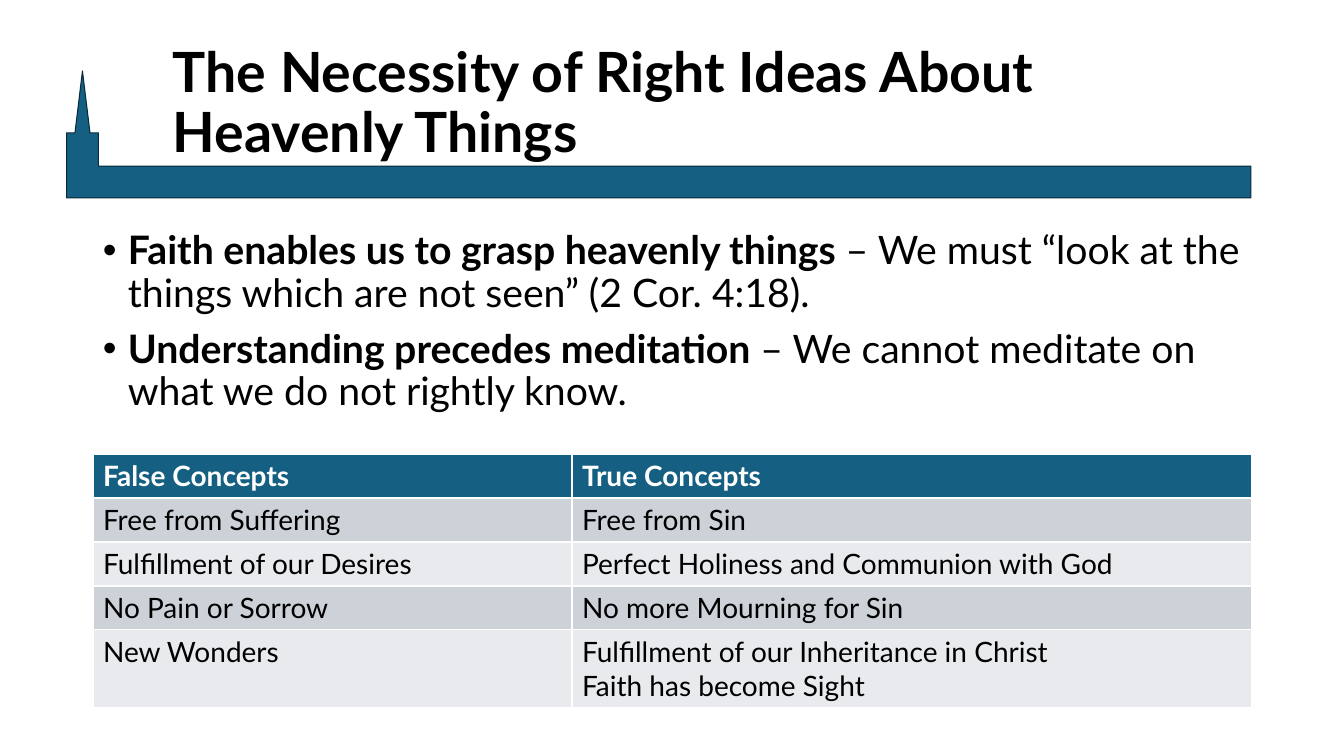
from pptx import Presentation
from pptx.dml.color import RGBColor
from pptx.enum.shapes import MSO_SHAPE
from pptx.enum.text import MSO_ANCHOR
from pptx.oxml.ns import qn
from pptx.util import Pt
from lxml import etree

PX = 914400 / 100.8
FONT = "Lato"
STEEPLE = MSO_SHAPE.BENT_UP_ARROW
MIDDLE = MSO_ANCHOR.MIDDLE

BLACK = RGBColor(0x00, 0x00, 0x00)
WHITE = RGBColor(0xFF, 0xFF, 0xFF)
BLUE = RGBColor(0x15, 0x60, 0x82)
DARK_BLUE = RGBColor(0x09, 0x2A, 0x39)
BAND_DARK = RGBColor(0xCC, 0xD2, 0xD8)
BAND_LIGHT = RGBColor(0xE8, 0xEA, 0xED)

POINTS = [
    ("Faith enables us to grasp heavenly things",
     " – We must “look at the things which are not seen” (2 Cor. 4:18)."),
    ("Understanding precedes meditation",
     " – We cannot meditate on what we do not rightly know."),
]
CONCEPTS = [
    ("False Concepts", "True Concepts"),
    ("Free from Suffering", "Free from Sin"),
    ("Fulfillment of our Desires", "Perfect Holiness and Communion with God"),
    ("No Pain or Sorrow", "No more Mourning for Sin"),
    ("New Wonders", "Fulfillment of our Inheritance in Christ\vFaith has become Sight"),
]
COLUMN_WIDTHS = [479, 680]
ROW_HEIGHTS = [44, 44, 44, 44, 76]


def px(*lengths):
    return [round(length * PX) for length in lengths]


def set_font(font, size, color=BLACK, bold=None):
    font.name = FONT
    font.size = Pt(size)
    font.color.rgb = color
    font.bold = bold


presentation = Presentation()
presentation.slide_width, presentation.slide_height = px(1344, 756)
slide = presentation.slides.add_slide(presentation.slide_layouts[6])

# Steeple with the bar under the title
steeple = slide.shapes.add_shape(STEEPLE, *px(75, 71, 1176, 127))
steeple.shadow.inherit = False
steeple.adjustments[0] = 0.25
steeple.adjustments[1] = 0.059
steeple.adjustments[2] = 0.487
steeple.fill.solid()
steeple.fill.fore_color.rgb = BLUE
steeple.line.color.rgb = DARK_BLUE
steeple.line.width = Pt(0.75)
steeple._element.spPr.find(qn("a:xfrm")).set("flipH", "1")

# Title
title = slide.shapes.add_textbox(*px(163, 41, 1089, 127)).text_frame
title.word_wrap = True
title.vertical_anchor = MIDDLE
title.text = "The Necessity of Right Ideas About Heavenly Things"
title.paragraphs[0].line_spacing = 0.9
set_font(title.paragraphs[0].font, 39.6, bold=True)

# Bulleted points
body = slide.shapes.add_textbox(*px(93, 226, 1159, 229)).text_frame
body.word_wrap = True
for index, (claim, reason) in enumerate(POINTS):
    paragraph = body.add_paragraph() if index else body.paragraphs[0]
    paragraph.line_spacing = 0.9
    if index:
        paragraph.space_before = Pt(10)
    properties = paragraph._p.get_or_add_pPr()
    indent = px(25)[0]
    properties.set("marL", str(indent))
    properties.set("indent", str(-indent))
    etree.SubElement(properties, qn("a:buFont")).set("typeface", "Arial")
    etree.SubElement(properties, qn("a:buChar")).set("char", "•")
    set_font(paragraph.font, 28)
    for text, bold in ((claim, True), (reason, False)):
        run = paragraph.add_run()
        run.text = text
        run.font.bold = bold

# Table of concepts
table = slide.shapes.add_table(
    len(CONCEPTS), len(COLUMN_WIDTHS),
    *px(93, 454, sum(COLUMN_WIDTHS), sum(ROW_HEIGHTS))).table
for column, width in zip(table.columns, px(*COLUMN_WIDTHS)):
    column.width = width
for row, height in zip(table.rows, px(*ROW_HEIGHTS)):
    row.height = height
for row_index, texts in enumerate(CONCEPTS):
    header = row_index == 0
    band = BAND_DARK if row_index % 2 else BAND_LIGHT
    for column_index, text in enumerate(texts):
        cell = table.cell(row_index, column_index)
        cell.text = text
        cell.fill.solid()
        cell.fill.fore_color.rgb = BLUE if header else band
        set_font(cell.text_frame.paragraphs[0].font, 20,
                 WHITE if header else BLACK, header)

presentation.save("out.pptx")
